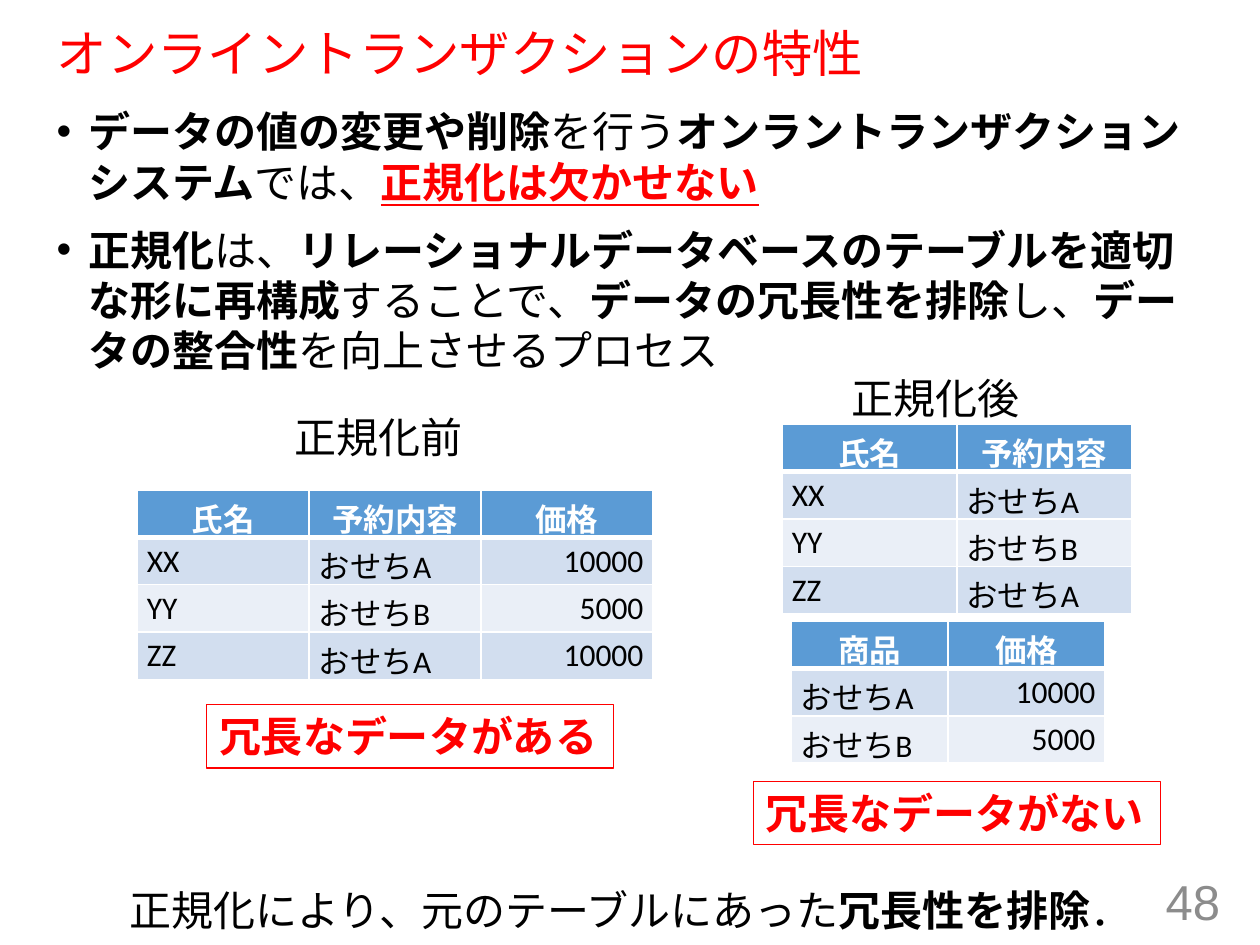
from dataclasses import dataclass

from lxml import etree
from pptx import Presentation
from pptx.dml.color import RGBColor
from pptx.enum import lang, shapes, text
from pptx.oxml import ns
from pptx.util import Pt


@dataclass(frozen=True)
class Theme:
    heading_font: str = "Arial"
    content_font: str = "Calibri"
    title_size: float = 28.8
    body_size: float = 24
    table_size: float = 18
    number_size: float = 28
    black: str = "000000"
    white: str = "FFFFFF"
    red: str = "FF0000"
    gray: str = "8C8C8C"
    header: str = "5B9BD5"
    bands: tuple = ("D2DEEF", "EAEFF7")


THEME = Theme()
LEFT, CENTER, RIGHT = text.PP_ALIGN.LEFT, text.PP_ALIGN.CENTER, text.PP_ALIGN.RIGHT
ROW_HEIGHT = 27

BULLETS = [
    [("データの値の変更や削除", "b"), ("を行う", ""),
     ("オンラントランザクションシステム", "b"), ("では、", ""),
     ("正規化は欠かせない", "bru")],
    [("正規化", "b"), ("は、", ""),
     ("リレーショナルデータベースのテーブルを適切な形に再構成", "b"),
     ("することで、", ""), ("データの冗長性を排除", "b"), ("し、", ""),
     ("データの整合性", "b"), ("を向上させるプロセス", "")],
]
CONCLUSION = [("正規化により、元のテーブルにあった", ""), ("冗長性を排除", "b"), ("．", "")]

ORDERS = [("氏名", "予約内容", "価格"),
          ("XX", "おせちA", "10000"),
          ("YY", "おせちB", "5000"),
          ("ZZ", "おせちA", "10000")]
RESERVATIONS = [row[:2] for row in ORDERS]
PRICES = [row[1:] for row in ORDERS[:3]]
PRICES[0] = ("商品", "価格")


def place(item, left, top, width, height):
    item.left, item.top, item.width, item.height = map(Pt, (left, top, width, height))


def add_runs(paragraph, runs, font, size, color=THEME.black):
    """Add (wording, marks) runs; marks are b for bold, r for red, u for underline."""
    for wording, marks in runs:
        run = paragraph.add_run()
        run.text = wording
        run.font.name = font
        run.font.size = Pt(size)
        run.font.bold = "b" in marks
        run.font.underline = "u" in marks
        run.font.language_id = lang.MSO_LANGUAGE_ID.JAPANESE
        run.font.color.rgb = RGBColor.from_string(THEME.red if "r" in marks else color)


def fill_title(title, wording):
    place(title, 25.2, 13.7, 666, 36.7)
    frame = title.text_frame
    frame.auto_size = text.MSO_AUTO_SIZE.NONE
    frame.vertical_anchor = text.MSO_ANCHOR.MIDDLE
    paragraph = frame.paragraphs[0]
    paragraph.alignment = LEFT
    paragraph.line_spacing = 0.9
    add_runs(paragraph, [(wording, "r")], THEME.heading_font, THEME.title_size)


def fill_body(body, bullets):
    place(body, 25.2, 56.9, 666, 411.8)
    frame = body.text_frame
    frame.auto_size = text.MSO_AUTO_SIZE.NONE
    for index, runs in enumerate(bullets):
        paragraph = frame.add_paragraph() if index else frame.paragraphs[0]
        paragraph.space_before = Pt(10)
        properties = paragraph._p.get_or_add_pPr()
        properties.set("marL", str(Pt(18)))
        properties.set("indent", str(Pt(-18)))
        etree.SubElement(properties, ns.qn("a:buChar"), char="•")
        add_runs(paragraph, runs, THEME.heading_font, THEME.body_size)


def add_label(slide, left, top, width, runs):
    label = slide.shapes.add_textbox(Pt(left), Pt(top), Pt(width), Pt(36.3))
    frame = label.text_frame
    frame.word_wrap = False
    frame.auto_size = text.MSO_AUTO_SIZE.SHAPE_TO_FIT_TEXT
    add_runs(frame.paragraphs[0], runs, THEME.content_font, THEME.body_size)


def add_verdict(slide, left, top, wording):
    box = slide.shapes.add_shape(
        shapes.MSO_SHAPE.RECTANGLE, Pt(left), Pt(top), Pt(232.6), Pt(36.3))
    box.shadow.inherit = False
    box.fill.background()
    box.line.color.rgb = RGBColor.from_string(THEME.red)
    box.line.width = Pt(0.75)
    frame = box.text_frame
    frame.word_wrap = False
    frame.auto_size = text.MSO_AUTO_SIZE.SHAPE_TO_FIT_TEXT
    frame.vertical_anchor = text.MSO_ANCHOR.TOP
    frame.paragraphs[0].alignment = LEFT
    add_runs(frame.paragraphs[0], [(wording, "br")], THEME.content_font, THEME.body_size)


def set_borders(cell, row):
    """Draw white borders, with a thick rule between the header and the first row."""
    widths = {"lnL": 1, "lnR": 1, "lnT": 3 if row == 1 else 1, "lnB": 3 if row == 0 else 1}
    properties = cell._tc.get_or_add_tcPr()
    for position, (side, width) in enumerate(widths.items()):
        border = etree.Element(ns.qn(f"a:{side}"), w=str(Pt(width)))
        fill = etree.SubElement(border, ns.qn("a:solidFill"))
        etree.SubElement(fill, ns.qn("a:srgbClr"), val=THEME.white)
        properties.insert(position, border)


def add_data_table(slide, left, top, column_width, rows):
    column_count = len(rows[0])
    table = slide.shapes.add_table(
        len(rows), column_count, Pt(left), Pt(top),
        Pt(column_width * column_count), Pt(ROW_HEIGHT * len(rows))).table
    for column in table.columns:
        column.width = Pt(column_width)
    for r, values in enumerate(rows):
        table.rows[r].height = Pt(ROW_HEIGHT)
        for c, value in enumerate(values):
            cell = table.cell(r, c)
            cell.margin_left = cell.margin_right = Pt(5.4)
            cell.margin_top = cell.margin_bottom = Pt(2.7)
            cell.fill.solid()
            cell.fill.fore_color.rgb = RGBColor.from_string(
                THEME.bands[(r - 1) % 2] if r else THEME.header)
            set_borders(cell, r)
            paragraph = cell.text_frame.paragraphs[0]
            if r == 0:
                paragraph.alignment = CENTER
            else:
                paragraph.alignment = RIGHT if value.isdecimal() else LEFT
            add_runs(paragraph, [(value, "" if r else "b")], THEME.content_font,
                     THEME.table_size, THEME.black if r else THEME.white)


def add_page_number(slide, number):
    box = slide.shapes.add_textbox(Pt(542.2), Pt(500.4), Pt(162), Pt(28.8))
    frame = box.text_frame
    frame.word_wrap = True
    frame.vertical_anchor = text.MSO_ANCHOR.MIDDLE
    frame.paragraphs[0].alignment = RIGHT
    add_runs(frame.paragraphs[0], [(number, "")], THEME.heading_font,
             THEME.number_size, THEME.gray)


def main():
    deck = Presentation()
    deck.slide_width, deck.slide_height = Pt(720), Pt(540)
    slide = deck.slides.add_slide(deck.slide_layouts[1])

    fill_title(slide.shapes.title, "オンライントランザクションの特性")
    fill_body(slide.placeholders[1], BULLETS)
    add_page_number(slide, "48")

    add_label(slide, 161.3, 231.8, 111.6, [("正規化前", "")])
    add_data_table(slide, 78.5, 280.1, 98.2, ORDERS)
    add_verdict(slide, 118.1, 402.5, "冗長なデータがある")

    add_label(slide, 479.5, 209.5, 111.6, [("正規化後", "")])
    add_data_table(slide, 447.1, 242.6, 99.7, RESERVATIONS)
    add_data_table(slide, 452.2, 355, 89.6, PRICES)
    add_verdict(slide, 430.6, 446.4, "冗長なデータがない")

    add_label(slide, 67, 501.8, 596.2, CONCLUSION)
    deck.save("out.pptx")


if __name__ == "__main__":
    main()
